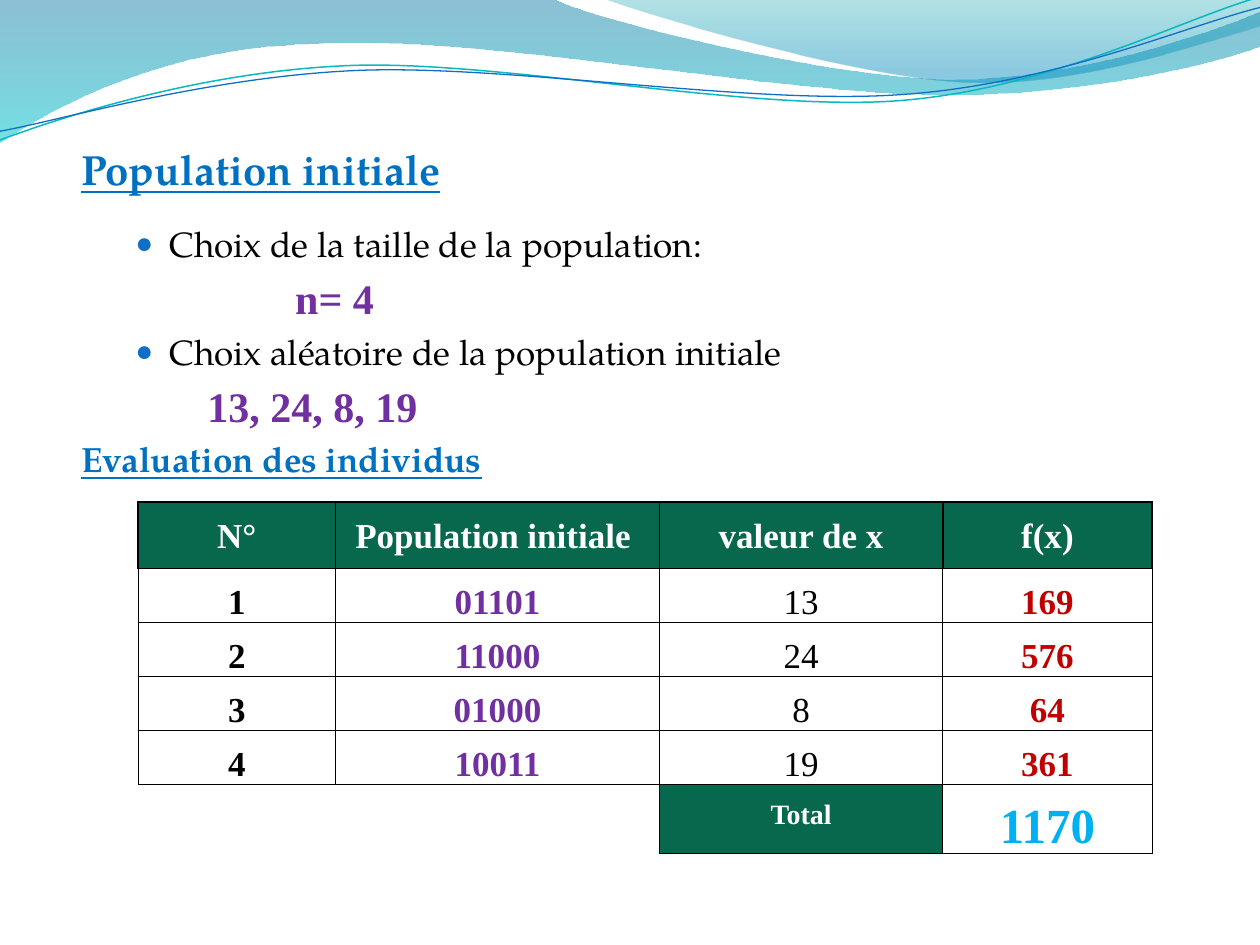
import pptx
import pptx.util
import pptx.dml.color
import pptx.enum.text
import pptx.oxml
import pptx.oxml.ns
import lxml.etree

Pt = pptx.util.Pt
qn = pptx.oxml.ns.qn
ALIGN = pptx.enum.text.PP_ALIGN

COLORS = {
    "black": "000000", "white": "FFFFFF", "blue": "0070C0", "dot": "0F6FC6",
    "teal": "0AB8BF", "purple": "7030A0", "red": "C00000", "green": "08684E",
    "sky": "00B0F0", "deep": "0074A1", "cyan": "00C6CF", "sea": "00A1A9",
    "lake": "008BBF",
}
SERIF = "Times New Roman"
BOOK = "TeX Gyre Pagella"


def color(name):
    return pptx.dml.color.RGBColor.from_string(COLORS[name])


def child(node, tag, **attrs):
    return lxml.etree.SubElement(node, qn(tag), attrs)


class Deck:
    def __init__(self, width, height):
        self.prs = pptx.Presentation()
        self.prs.slide_width, self.prs.slide_height = Pt(width), Pt(height)
        self.slide = self.prs.slides.add_slide(self.prs.slide_layouts[1])
        title = self.slide.shapes.title.element
        title.getparent().remove(title)

    def style(self, para, face, size, ink, bold, under=None):
        for run in para.runs:
            font = run.font
            font.name, font.size, font.bold = face, Pt(size), bold
            font.underline = under
            font.color.rgb = color(ink)

    def outline(self, start, parts, close):
        points = [(Pt(x), Pt(y)) for part in parts
                  for x, y in zip(part[::2], part[1::2])]
        pen = self.slide.shapes.build_freeform(Pt(start[0]), Pt(start[1]))
        pen.add_line_segments(points, close=close)
        shape = pen.convert_to_shape()
        shape.shadow.inherit = False
        lines = iter(list(shape.element.iter(qn("a:lnTo"))))
        for part in parts:
            steps = [next(lines) for _ in part[::2]]
            if len(steps) == 3:
                bend = lxml.etree.Element(qn("a:cubicBezTo"))
                steps[0].addprevious(bend)
                for step in steps:
                    bend.append(step[0])
                    step.getparent().remove(step)
        return shape

    def wave(self, start, parts, stops):
        shape = self.outline(start, parts, True)
        shape.line.fill.background()
        shape.fill.gradient()
        shape.fill.gradient_angle = 270
        for stop, (place, ink, alpha) in zip(shape.fill.gradient_stops, stops):
            stop.position = place
            stop.color.rgb = color(ink)
        marks = shape.element.iter(qn("a:srgbClr"))
        for mark, (place, ink, alpha) in zip(marks, stops):
            child(mark, "a:alpha", val=str(alpha * 1000))

    def curve(self, start, parts, ink, width):
        shape = self.outline(start, parts, False)
        shape.fill.background()
        shape.line.color.rgb = color(ink)
        shape.line.width = Pt(width)

    def body(self, left, top, width, height, items):
        box = self.slide.placeholders[1]
        self.slide.shapes.element.append(box.element)
        box.left, box.top = Pt(left), Pt(top)
        box.width, box.height = Pt(width), Pt(height)
        frame = box.text_frame
        frame.auto_size = pptx.enum.text.MSO_AUTO_SIZE.NONE
        frame.vertical_anchor = pptx.enum.text.MSO_ANCHOR.TOP
        frame.text = "\n".join(item[0] for item in items)
        for para, (text, kind, size, indent) in zip(frame.paragraphs, items):
            para.alignment = ALIGN.JUSTIFY
            para.level = 0 if kind == "head" else 1
            props = para._p.get_or_add_pPr()
            props.set("marL", str(Pt(indent)))
            props.set("indent", str(Pt(-19.4 if kind == "list" else 0)))
            if kind == "list":
                child(child(props, "a:buClr"), "a:srgbClr", val=COLORS["dot"])
                child(props, "a:buSzPct", val="85000")
                child(props, "a:buChar", char="●")
                self.style(para, BOOK, size, "black", False)
            else:
                child(props, "a:buNone")
                if kind == "head":
                    para.space_after = Pt(12)
                    self.style(para, BOOK, size, "blue", True, True)
                else:
                    self.style(para, SERIF, size, "purple", True)
        frame.paragraphs[0].space_before = Pt(0)

    def border(self, cell, widths):
        props = cell._tc.get_or_add_tcPr()
        for side, width in zip("LRTB", widths):
            line = child(props, "a:ln" + side, w=str(Pt(width)))
            if width:
                fill = child(line, "a:solidFill")
                child(fill, "a:srgbClr", val=COLORS["black"])
            else:
                child(line, "a:noFill")

    def cell(self, cell, text, size, ink, bold, back, widths):
        self.border(cell, widths)
        if back:
            cell.fill.solid()
            cell.fill.fore_color.rgb = color(back)
        else:
            cell.fill.background()
        cell.margin_left = cell.margin_right = cell.margin_bottom = 0
        cell.margin_top = Pt(8.6)
        cell.text = text
        para = cell.text_frame.paragraphs[0]
        para.alignment = ALIGN.CENTER
        self.style(para, SERIF, size, ink, bold)

    def table(self, left, top, cols, rows, data):
        frame = self.slide.shapes.add_table(
            len(rows), len(cols), Pt(left), Pt(top), Pt(sum(cols)), Pt(sum(rows)))
        grid = frame.table
        grid.first_row = grid.horz_banding = False
        for col, width in zip(grid.columns, cols):
            col.width = Pt(width)
        for row, height in zip(grid.rows, rows):
            row.height = Pt(height)
        inks = ("black", "purple", "black", "red")
        last = len(rows) - 1
        for r, line in enumerate(data):
            for c, text in enumerate(line):
                size, ink, bold, back = 20, inks[c], c != 2, None
                widths = (0.5, 0.5, 1 if r == 1 else 0.5, 0.5)
                if r == 0:
                    ink, bold, back, widths = "white", True, "green", (1, 1, 1, 1)
                elif r == last and not text:
                    widths = (0, 0.5 if c == 1 else 0, 0.5, 0)
                elif r == last:
                    bold = True
                    size, ink, back = ((16, "white", "green") if c == 2
                                       else (28, "sky", None))
                self.cell(grid.cell(r, c), text, size, ink, bold, back, widths)


def main():
    deck = Deck(720, 540)
    deck.wave((0, 0), [
        (317, -0.5), (343, 12, 478, 45, 546, 45), (614, 45, 690, 19, 720, 6.5),
        (720.5, 26), (708, 32, 626, 55, 537, 54), (447, 54, 275, 20, 185, 24.5),
        (93, 26, 33, 60, -0.5, 81.4), (0, 0)],
        [(0, "deep", 45), (1, "cyan", 55)])
    deck.wave((345, -0.5), [
        (367, 8, 491, 45, 554, 47), (616, 49.7, 692, 23, 720, 15),
        (720, 0), (345, -0.5)],
        [(0, "sea", 30), (0.8, "lake", 45)])
    deck.curve((0, 80), [
        (35, 67, 114, 41, 199, 37.5), (284, 34, 427, 64, 513, 57.6),
        (600, 51, 675, 11, 719, -1.5)], "teal", 0.85)
    deck.curve((0, 75), [
        (34, 69, 118, 44, 204, 40.3), (290, 36.7, 430, 60.5, 516, 54),
        (602, 48, 677, 15, 720, 4.3)], "dot", 0.75)
    deck.body(39.3, 78.6, 648, 438.5, [
        ("Population initiale", "head", 24, 0),
        ("Choix de la taille de la population: ", "list", 20, 50.2),
        ("n= 4 ", "value", 24, 122.2),
        ("Choix aléatoire de la population initiale", "list", 20, 50.2),
        ("13, 24, 8, 19", "value", 24, 72),
        ("Evaluation des individus", "head", 20, 0)])
    deck.table(78.8, 286.8, [113, 185, 162, 119.5], [38] + [30.85] * 4 + [39.4], [
        ("N°", "Population initiale ", "valeur de x", "f(x)"),
        ("1", "01101", "13", "169"),
        ("2", "11000", "24", "576"),
        ("3", "01000", "8", "64"),
        ("4", "10011", "19", "361"),
        ("", "", "Total", "1170")])
    deck.prs.save("out.pptx")


if __name__ == "__main__":
    main()
